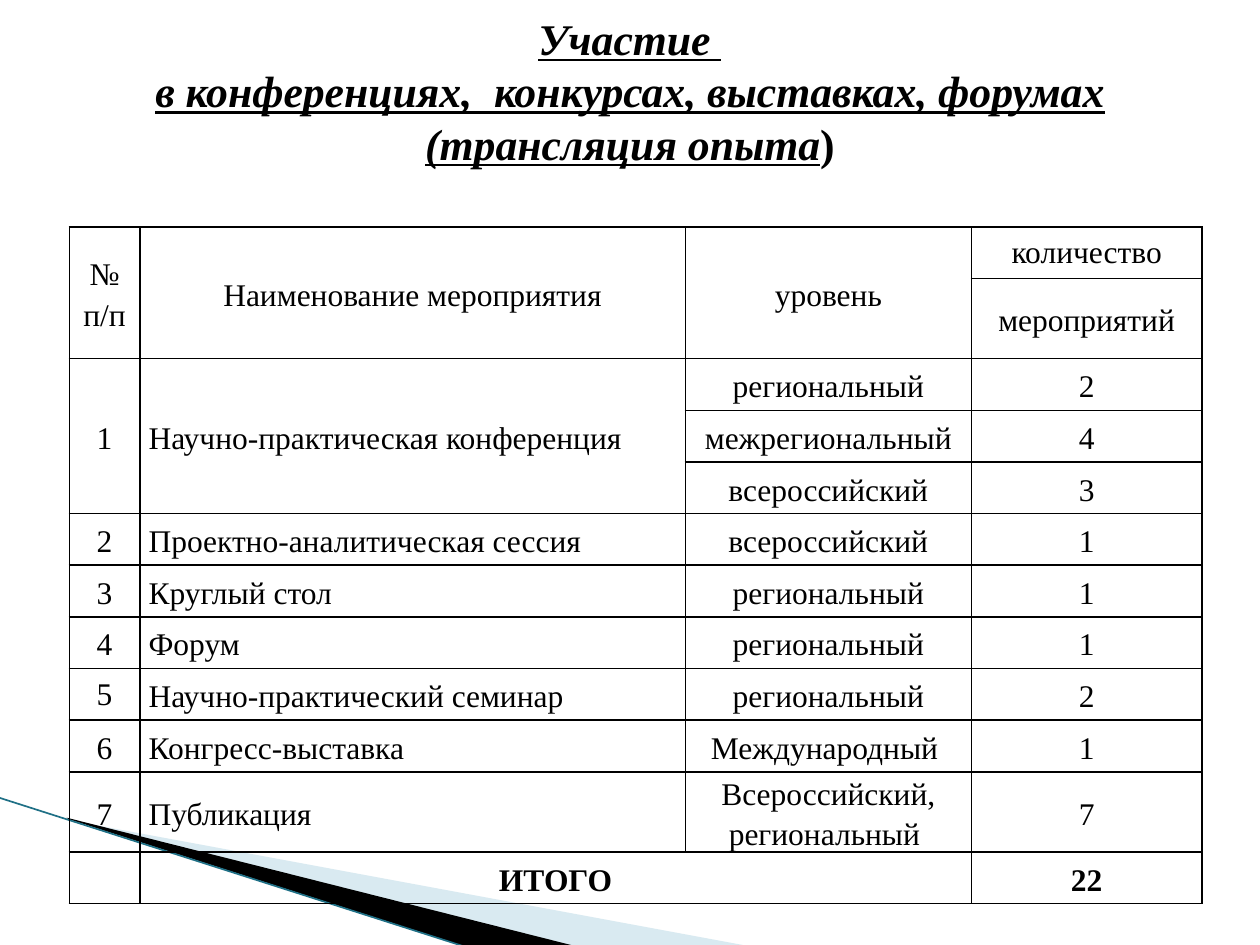
"""Build a slide with a table of conferences, contests, exhibitions and forums."""
from typing import NamedTuple

from lxml import etree
from pptx import Presentation
from pptx import util as u
from pptx.dml.color import RGBColor
from pptx.enum import shapes, text
from pptx.oxml.ns import qn

FONT = "Times New Roman"
HUES = {"ink": "000000", "pale": "A0CBDC", "teal": "1F7086"}


class Row(NamedTuple):
    num: str
    name: str
    level: str
    count: str


class Span(NamedTuple):
    top: int
    left: int
    end: int
    right: int


class Wedge(NamedTuple):
    points: list
    hue: str
    alpha: int


ROWS = [
    Row("№ п/п", "Наименование мероприятия", "уровень", "количество"),
    Row("", "", "", "мероприятий"),
    Row("1", "Научно-практическая конференция", "региональный", "2"),
    Row("", "", "межрегиональный", "4"),
    Row("", "", "всероссийский", "3"),
    Row("2", "Проектно-аналитическая сессия", "всероссийский", "1"),
    Row("3", "Круглый стол", "региональный", "1"),
    Row("4", "Форум", "региональный", "1"),
    Row("5", "Научно-практический семинар", "региональный", "2"),
    Row("6", "Конгресс-выставка", "Международный ", "1"),
    Row("7", "Публикация", "Всероссийский, региональный ", "7"),
    Row("", "ИТОГО", "", "22"),
]
HEAD, LAST = 2, len(ROWS) - 1
SPANS = [Span(0, col, 1, col) for col in range(3)]
SPANS += [Span(2, col, 4, col) for col in range(2)] + [Span(LAST, 1, LAST, 2)]
WIDTHS = [0.56, 4.33, 2.27, 1.83]
SINGLE = {(0, 3), (8, 0)}
WEDGES = [
    Wedge([(0.55, 6.51), (5.95, 7.51), (4.56, 7.51), (0.55, 6.5)], "pale", 40),
    Wedge([(0.53, 6.49), (4.57, 7.51), (3.72, 7.52), (0.54, 6.5)], "ink", 100),
]


def tint(hue: str) -> RGBColor:
    """Return a named colour."""
    return RGBColor.from_string(HUES[hue])


def style(font, size: float, bold: bool) -> None:
    """Set the face, size, weight and colour of a font."""
    font.name, font.size, font.bold = FONT, u.Pt(size), bold
    font.color.rgb = tint("ink")


def draw_wedge(slide, wedge: Wedge) -> None:
    """Draw one filled wedge."""
    spots = [(u.Inches(x), u.Inches(y)) for x, y in wedge.points]
    form = slide.shapes.build_freeform(*spots[0])
    form.add_line_segments(spots[1:])
    shape = form.convert_to_shape()
    shape.shadow.inherit = False
    shape.line.fill.background()
    shape.fill.solid()
    shape.fill.fore_color.rgb = tint(wedge.hue)
    if wedge.alpha < 100:
        clr = shape.fill._xPr.find(".//" + qn("a:srgbClr"))
        etree.SubElement(clr, qn("a:alpha"), val=str(wedge.alpha * 1000))


def draw_edge(slide) -> None:
    """Draw the thin slanted line."""
    edge = slide.shapes.add_connector(
        shapes.MSO_CONNECTOR.STRAIGHT,
        u.Inches(-0.01), u.Inches(6.33), u.Inches(3.71), u.Inches(7.52))
    edge.line.width = u.Pt(0.95)
    edge.line.color.rgb = tint("teal")
    etree.SubElement(edge._element.spPr, qn("a:effectLst"))


def frame(cell) -> None:
    """Clear the fill of a cell and border it on all sides."""
    cell.fill.background()
    props = cell._tc.get_or_add_tcPr()
    for spot, side in enumerate(("lnL", "lnR", "lnT", "lnB")):
        line = etree.Element(qn(f"a:{side}"), w=str(u.Pt(1)))
        fill = etree.SubElement(line, qn("a:solidFill"))
        etree.SubElement(fill, qn("a:srgbClr"), val=HUES["ink"])
        props.insert(spot, line)


def draw_table(slide) -> None:
    """Draw the table of events."""
    table = slide.shapes.add_table(
        len(ROWS), len(WIDTHS), u.Inches(0.55), u.Inches(1.8),
        u.Inches(sum(WIDTHS)), u.Inches(0.41 * len(ROWS))).table
    table.first_row = table.horz_banding = False
    for col, width in zip(table.columns, WIDTHS):
        col.width = u.Inches(width)
    for r, row in enumerate(ROWS):
        for c, word in enumerate(row):
            cell = table.cell(r, c)
            frame(cell)
            cell.margin_left = cell.margin_right = u.Inches(0.07)
            cell.margin_top = cell.margin_bottom = 0
            cell.vertical_anchor = text.MSO_ANCHOR.MIDDLE
            cell.text = word
            para = cell.text_frame.paragraphs[0]
            left = c == 1 and HEAD <= r < LAST
            para.alignment = text.PP_ALIGN.LEFT if left else text.PP_ALIGN.CENTER
            para.line_spacing = 1.0 if (r, c) in SINGLE else 1.15
            style(para.font, 18, r == LAST)
    for span in SPANS:
        table.cell(span.top, span.left).merge(table.cell(span.end, span.right))


def draw_title(slide) -> None:
    """Write the heading."""
    box = slide.shapes.add_textbox(
        u.Inches(0.5), u.Inches(0.3), u.Inches(9), u.Inches(1.25)).text_frame
    box.word_wrap = True
    box.vertical_anchor = text.MSO_ANCHOR.MIDDLE
    box.margin_bottom = u.Inches(0.47)
    para = box.paragraphs[0]
    para.alignment = text.PP_ALIGN.CENTER
    para.line_spacing = u.Pt(30)
    style(para.font, 25, True)
    lead = "Участие ", "в конференциях,  конкурсах, выставках, форумах (трансляция опыта"
    for spot, words in enumerate(lead):
        if spot:
            para.add_line_break()
        run = para.add_run()
        run.text = words
        run.font.italic = run.font.underline = True
    para.add_run().text = ")"


def main() -> None:
    """Build and save the slide."""
    deck = Presentation()
    deck.slide_width, deck.slide_height = u.Inches(10), u.Inches(7.5)
    slide = deck.slides.add_slide(deck.slide_layouts[6])
    for wedge in WEDGES:
        draw_wedge(slide, wedge)
    draw_edge(slide)
    draw_table(slide)
    draw_title(slide)
    deck.save("out.pptx")


if __name__ == "__main__":
    main()
